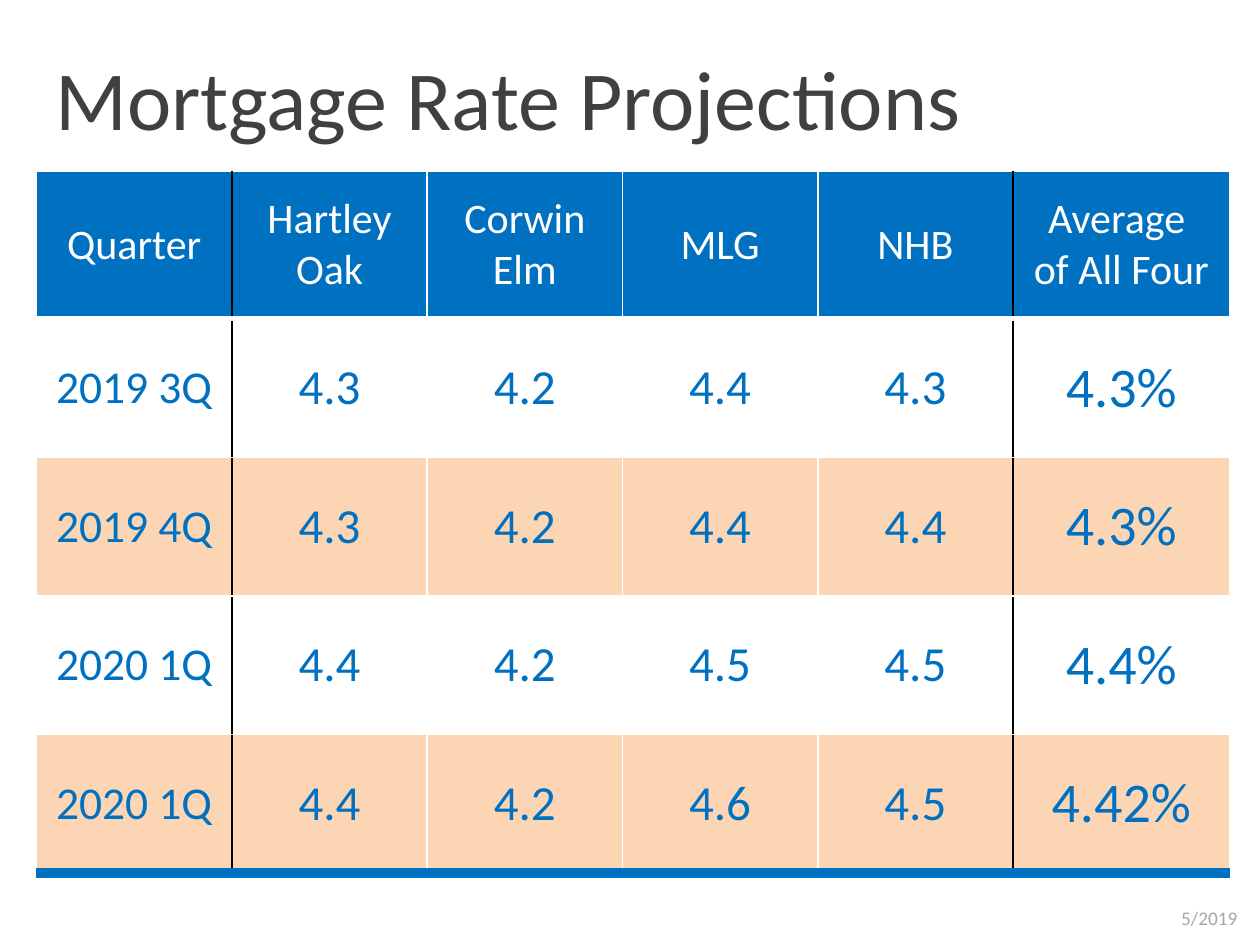
import pptx
import pptx.util
import pptx.dml.color
import pptx.enum.text
import pptx.oxml.ns
import lxml.etree

Inches = pptx.util.Inches
Align = pptx.enum.text.PP_ALIGN
Anchor = pptx.enum.text.MSO_ANCHOR
theme = {
    "font": "Calibri",
    "blue": "0070C0", "peach": "FCD5B5", "white": "FFFFFF",
    "black": "000000", "dark": "404040", "gray": "A6A6A6",
    "title": 48, "head": 24, "quarter": 26, "rate": 28, "mean": 32, "date": 11,
}


def put(frame, text, size, color, align):
    frame.text = text
    for para in frame.paragraphs:
        para.alignment = align
        style = {"name": theme["font"], "size": pptx.util.Pt(theme[size]), "bold": False}
        for key, value in style.items():
            setattr(para.font, key, value)
        para.font.color.rgb = pptx.dml.color.RGBColor.from_string(theme[color])


def edge(cell, side, color, width):
    qn = pptx.oxml.ns.qn
    props = cell._tc.get_or_add_tcPr()
    line = lxml.etree.SubElement(props, qn("a:ln" + side), w=str(pptx.util.Pt(width)))
    fill = lxml.etree.SubElement(line, qn("a:solidFill"))
    lxml.etree.SubElement(fill, qn("a:srgbClr"), val=theme[color])


deck = pptx.Presentation()
deck.slide_width, deck.slide_height = Inches(10), Inches(7.5)
slide = deck.slides.add_slide(deck.slide_layouts[5])

title = slide.shapes.title
place = {"left": 0.34, "top": 0.32, "width": 8.67, "height": 0.91}
for key, value in place.items():
    setattr(title, key, Inches(value))
date = slide.shapes.add_textbox(Inches(8.6), Inches(7.14), Inches(1.32), Inches(0.29))
frames = [
    (title.text_frame, "Mortgage Rate Projections", "title", "dark", Align.LEFT),
    (date.text_frame, "5/2019", "date", "gray", Align.RIGHT),
]
form = {
    "word_wrap": True,
    "vertical_anchor": Anchor.TOP,
    "auto_size": pptx.enum.text.MSO_AUTO_SIZE.SHAPE_TO_FIT_TEXT,
}
for frame, *look in frames:
    put(frame, *look)
    for key, value in form.items():
        setattr(frame, key, value)

rows = [
    ["Quarter", "Hartley Oak", "Corwin Elm", "MLG", "NHB", "Average \nof All Four"],
    ["2019 3Q", "4.3", "4.2", "4.4", "4.3", "4.3%"],
    ["2019 4Q", "4.3", "4.2", "4.4", "4.4", "4.3%"],
    ["2020 1Q", "4.4", "4.2", "4.5", "4.5", "4.4%"],
    ["2020 1Q", "4.4", "4.2", "4.6", "4.5", "4.42%"],
]
wide = [1.55] * 5 + [1.72]
high = [1.17] + [1.1] * 4
sizes = ["quarter"] + ["rate"] * 4 + ["mean"]
last = len(rows) - 1
grid = slide.shapes.add_table(
    len(rows), len(wide), Inches(0.29), Inches(1.36), Inches(sum(wide)), Inches(sum(high))
).table
grid.horz_banding = False
for col, width in zip(grid.columns, wide):
    col.width = Inches(width)
for row, height in zip(grid.rows, high):
    row.height = Inches(height)

pad = {
    "margin_left": Inches(0.1), "margin_right": Inches(0.1),
    "margin_top": Inches(0.07), "margin_bottom": Inches(0.07),
    "vertical_anchor": Anchor.MIDDLE,
}
for r, words in enumerate(rows):
    for c, word in enumerate(words):
        cell = grid.cell(r, c)
        for key, value in pad.items():
            setattr(cell, key, value)
        edge(cell, "L", "black" if c in (1, 5) else "white", 1)
        edge(cell, "R", "black" if c in (0, 4) else "white", 1)
        edge(cell, "T", "white", 3 if r == 1 else 1)
        edge(cell, "B", "blue" if r == last else "white", {0: 3, last: 6}.get(r, 1))
        back = "blue" if r == 0 else "white" if r % 2 else "peach"
        cell.fill.solid()
        cell.fill.fore_color.rgb = pptx.dml.color.RGBColor.from_string(theme[back])
        size, color = (sizes[c], "blue") if r else ("head", "white")
        put(cell.text_frame, word, size, color, Align.CENTER)

deck.save("out.pptx")
